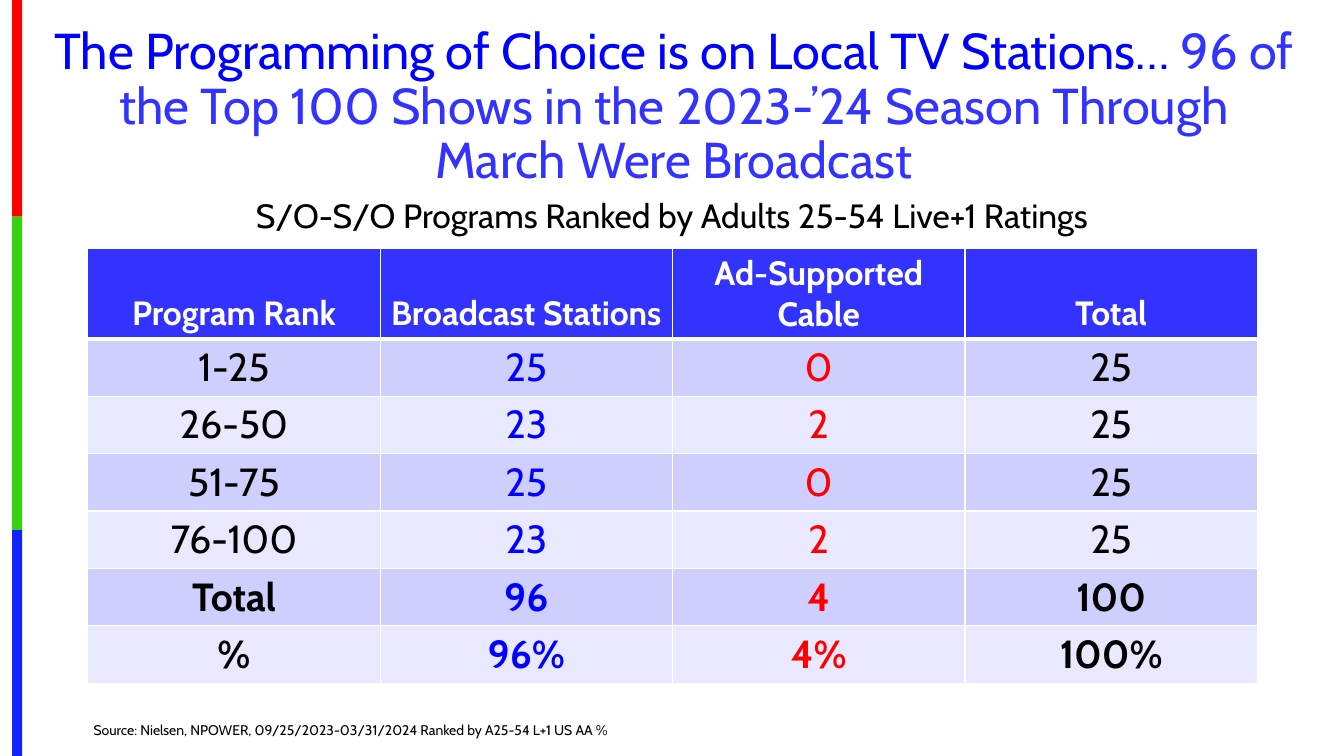
from lxml import etree
from pptx import Presentation
from pptx.dml.color import RGBColor
from pptx.enum.shapes import MSO_SHAPE
from pptx.enum.text import MSO_ANCHOR, PP_ALIGN
from pptx.oxml.ns import qn
from pptx.util import Pt

PX = 9144
SLIDE_SIZE = (1333, 750)
FONT = "Cabin"
RECTANGLE = MSO_SHAPE.RECTANGLE
LEFT, CENTER = PP_ALIGN.LEFT, PP_ALIGN.CENTER
TOP, MIDDLE, BOTTOM = MSO_ANCHOR.TOP, MSO_ANCHOR.MIDDLE, MSO_ANCHOR.BOTTOM

BLACK = RGBColor(0x00, 0x00, 0x00)
WHITE = RGBColor(0xFF, 0xFF, 0xFF)
BLUE = RGBColor(0x00, 0x00, 0xFF)
RED = RGBColor(0xFF, 0x00, 0x00)
INDIGO = RGBColor(0x33, 0x33, 0xFF)
ROW_FILLS = (RGBColor(0xCE, 0xCE, 0xFF), RGBColor(0xE8, 0xE8, 0xFF))
COLUMN_COLORS = (BLACK, BLUE, RED, BLACK)
STRIPES = (
    (215, RGBColor(0xFE, 0x00, 0x00)),
    (311, RGBColor(0x36, 0xCF, 0x12)),
    (224, RGBColor(0x13, 0x22, 0xFE)),
)

TITLE_RUNS = (
    ("The Programming of Choice is on Local TV Stations… ", BLUE),
    ("96 of the Top 100 Shows in the 2023-’24 Season Through March Were Broadcast", INDIGO),
)
SUBTITLE = "S/O-S/O Programs Ranked by Adults 25-54 Live+1 Ratings"
SOURCE = "Source: Nielsen, NPOWER, 09/25/2023-03/31/2024 Ranked by A25-54 L+1 US AA %"
HEADERS = ("Program Rank", "Broadcast Stations", "Ad-Supported\nCable", "Total")
RATING_ROWS = (
    ("1-25", "25", "0", "25"),
    ("26-50", "23", "2", "25"),
    ("51-75", "25", "0", "25"),
    ("76-100", "23", "2", "25"),
    ("Total", "96", "4", "100"),
    ("%", "96%", "4%", "100%"),
)
FIRST_BOLD_ROW = 5
HEADER_HEIGHT, ROW_HEIGHT = 90, 57


def scale(*lengths):
    """Turn px lengths into EMU."""
    return [length * PX for length in lengths]


def format_font(font, size, color, bold=False):
    """Apply the slide's font with a size, colour and weight."""
    for name, value in {"name": FONT, "size": Pt(size), "bold": bold}.items():
        setattr(font, name, value)
    font.color.rgb = color


def write_runs(text_frame, runs, size, alignment, anchor):
    """Write one paragraph of coloured runs into a text frame."""
    frame_format = {"word_wrap": True, "vertical_anchor": anchor}
    for name, value in frame_format.items():
        setattr(text_frame, name, value)
    paragraph = text_frame.paragraphs[0]
    paragraph.alignment = alignment
    paragraph.line_spacing = 0.9
    for text, color in runs:
        run = paragraph.add_run()
        run.text = text
        format_font(run.font, size, color)


def add_stripes(slide, left, top, width):
    """Stack the coloured stripes down the slide's edge."""
    for height, color in STRIPES:
        stripe = slide.shapes.add_shape(RECTANGLE, *scale(left, top, width, height))
        stripe.shadow.inherit = False
        stripe.fill.solid()
        stripe.fill.fore_color.rgb = color
        stripe.line.fill.background()
        top += height


def place_title(slide, box):
    """Move the title placeholder to its box and fill it."""
    title = slide.shapes.title
    title.left, title.top, title.width, title.height = scale(*box)
    write_runs(title.text_frame, TITLE_RUNS, 36, CENTER, MIDDLE)


def add_caption(slide, box, text, size, alignment, anchor):
    """Add a single black line of text."""
    caption = slide.shapes.add_textbox(*scale(*box))
    write_runs(caption.text_frame, [(text, BLACK)], size, alignment, anchor)


def add_borders(cell, top_width, bottom_width):
    """Draw white lines around a cell."""
    properties = cell._tc.get_or_add_tcPr()
    widths = {"a:lnL": 1, "a:lnR": 1, "a:lnT": top_width, "a:lnB": bottom_width}
    for tag, width in widths.items():
        line = etree.SubElement(properties, qn(tag), w=str(Pt(width)))
        fill = etree.SubElement(line, qn("a:solidFill"))
        etree.SubElement(fill, qn("a:srgbClr"), val=str(WHITE))


def format_cell(cell, row, column):
    """Style a cell by its place in the table."""
    add_borders(cell, 3 if row == 1 else 1, 1 if row else 3)
    cell.fill.solid()
    cell.fill.fore_color.rgb = ROW_FILLS[(row - 1) % 2] if row else INDIGO
    cell.vertical_anchor = MIDDLE if row else BOTTOM
    size, color = (28, COLUMN_COLORS[column]) if row else (24, WHITE)
    bold = row == 0 or row >= FIRST_BOLD_ROW
    for paragraph in cell.text_frame.paragraphs:
        paragraph.alignment = CENTER
        for run in paragraph.runs:
            format_font(run.font, size, color, bold)


def add_ratings_table(slide, left, top, width):
    """Add the table of programs by rank and channel type."""
    rows = (HEADERS, *RATING_ROWS)
    height = HEADER_HEIGHT + ROW_HEIGHT * len(RATING_ROWS)
    frame = slide.shapes.add_table(len(rows), len(HEADERS), *scale(left, top, width, height))
    table = frame.table
    for row, texts in enumerate(rows):
        table.rows[row].height = (ROW_HEIGHT if row else HEADER_HEIGHT) * PX
        for column, text in enumerate(texts):
            cell = table.cell(row, column)
            cell.text = text
            format_cell(cell, row, column)


def build_ratings_slide(presentation):
    """Build the slide on broadcast's share of the top shows."""
    slide = presentation.slides.add_slide(presentation.slide_layouts[5])
    add_stripes(slide, 12, 0, 10)
    place_title(slide, (42, 20, 1253, 174))
    add_caption(slide, (83, 713, 1057, 27), SOURCE, 10, LEFT, TOP)
    add_caption(slide, (183, 193, 967, 46), SUBTITLE, 24, CENTER, MIDDLE)
    add_ratings_table(slide, 87, 246, 1160)


def main():
    """Create and save the presentation."""
    presentation = Presentation()
    presentation.slide_width, presentation.slide_height = scale(*SLIDE_SIZE)
    build_ratings_slide(presentation)
    presentation.save("out.pptx")


if __name__ == "__main__":
    main()
